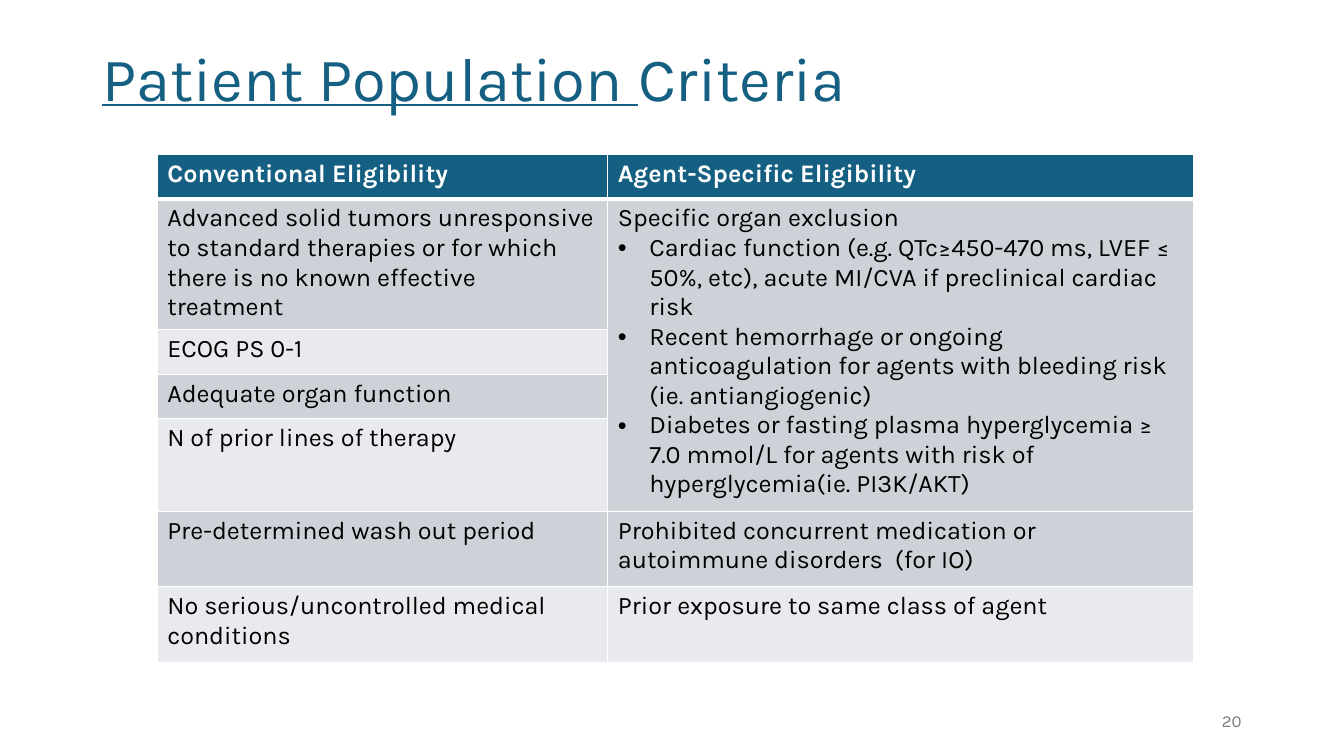
from pptx import Presentation
from pptx.dml.color import RGBColor
from pptx.enum.text import MSO_ANCHOR as Anchor, PP_ALIGN as Align
from pptx.oxml.ns import qn
from pptx.util import Pt
from lxml.etree import SubElement

FONT = "Karla"
BLUE, BLACK, WHITE, GREY = "156082", "000000", "FFFFFF", "797979"
BANDS = ["CCD2D8", "E8EAED"]
TITLE = [("Patient Population ", True), ("Criteria", False)]
PAGE_NUMBER = "20"
HEADERS = ["Conventional Eligibility", "Agent-Specific Eligibility"]
CONVENTIONAL = [
    "Advanced solid tumors unresponsive to standard therapies or for which "
    "there is no known effective treatment",
    "ECOG PS 0-1",
    "Adequate organ function",
    "N of prior lines of therapy",
    "Pre-determined wash out period",
    "No serious/uncontrolled medical conditions",
]
ORGAN_EXCLUSION = [
    "Specific organ exclusion",
    "Cardiac function (e.g. QTc≥450-470 ms, LVEF ≤ 50%, etc), "
    "acute MI/CVA if preclinical cardiac risk",
    "Recent hemorrhage or ongoing anticoagulation for agents with "
    "bleeding risk (ie. antiangiogenic)",
    "Diabetes or fasting plasma hyperglycemia ≥ 7.0 mmol/L for agents "
    "with risk of hyperglycemia(ie. PI3K/AKT)",
]
AGENT_SPECIFIC = {
    1: ORGAN_EXCLUSION,
    5: ["Prohibited concurrent medication or autoimmune disorders  (for IO)"],
    6: ["Prior exposure to same class of agent"],
}
COLUMN_WIDTHS = [321.9, 418.3]
ROW_HEIGHTS = [31.7, 77.8, 31.7, 31.7, 53.3, 54, 54]
MERGED_ROWS = (1, 4)
INDENT = 22.5


def color(value):
    return RGBColor.from_string(value)


def add_span(para, text, size, shade, bold=False, underline=False):
    span = para.add_run()
    span.text = text
    font = span.font
    font.name, font.size, font.bold, font.underline = FONT, Pt(size), bold, underline
    font.color.rgb = color(shade)


def add_box(page, left, top, width, height):
    frame = page.shapes.add_textbox(Pt(left), Pt(top), Pt(width), Pt(height)).text_frame
    frame.word_wrap = True
    frame.vertical_anchor = Anchor.MIDDLE
    return frame.paragraphs[0]


def add_bullet(para):
    props = para._p.get_or_add_pPr()
    props.set("marL", str(Pt(INDENT)))
    props.set("indent", str(-Pt(INDENT)))
    SubElement(props, qn("a:buFont"), typeface="Arial")
    SubElement(props, qn("a:buChar"), char="•")


def style_cell(cell, shade, bottom):
    props = cell._tc.get_or_add_tcPr()
    for side, width in (("L", 1), ("R", 1), ("T", 1), ("B", bottom)):
        line = SubElement(props, qn(f"a:ln{side}"), w=str(Pt(width)))
        SubElement(SubElement(line, qn("a:solidFill")), qn("a:srgbClr"), val=WHITE)
    cell.fill.solid()
    cell.fill.fore_color.rgb = color(shade)


def write_cell(cell, lines, shade, bold):
    frame = cell.text_frame
    for index, text in enumerate(lines):
        para = frame.add_paragraph() if index else frame.paragraphs[0]
        if index:
            add_bullet(para)
        add_span(para, text, 18, shade, bold)


def add_criteria_table(page):
    table = page.shapes.add_table(
        len(ROW_HEIGHTS), len(COLUMN_WIDTHS), Pt(112.3), Pt(110.2),
        Pt(sum(COLUMN_WIDTHS)), Pt(sum(ROW_HEIGHTS))).table
    for column, width in zip(table.columns, COLUMN_WIDTHS):
        column.width = Pt(width)
    for row, height in zip(table.rows, ROW_HEIGHTS):
        row.height = Pt(height)
    first, last = MERGED_ROWS
    table.cell(first, 1).merge(table.cell(last, 1))
    for row in range(len(ROW_HEIGHTS)):
        header = row == 0
        for column in range(len(COLUMN_WIDTHS)):
            merged = column == 1 and first <= row <= last
            band = BANDS[0] if merged else BANDS[(row - 1) % 2]
            cell = table.cell(row, column)
            style_cell(cell, BLUE if header else band, 3 if header else 1)
            if header:
                lines = [HEADERS[column]]
            elif column == 0:
                lines = [CONVENTIONAL[row - 1]]
            else:
                lines = AGENT_SPECIFIC.get(row, [])
            write_cell(cell, lines, WHITE if header else BLACK, header)


def main():
    deck = Presentation()
    deck.slide_width, deck.slide_height = Pt(960), Pt(540)
    page = deck.slides.add_slide(deck.slide_layouts[6])
    heading = add_box(page, 66, 6, 828, 104.4)
    heading.line_spacing = 0.9
    for text, underline in TITLE:
        add_span(heading, text, 44, BLUE, underline=underline)
    number = add_box(page, 678, 500.5, 216, 28.8)
    number.alignment = Align.RIGHT
    add_span(number, PAGE_NUMBER, 12, GREY)
    add_criteria_table(page)
    deck.save("out.pptx")


if __name__ == "__main__":
    main()
